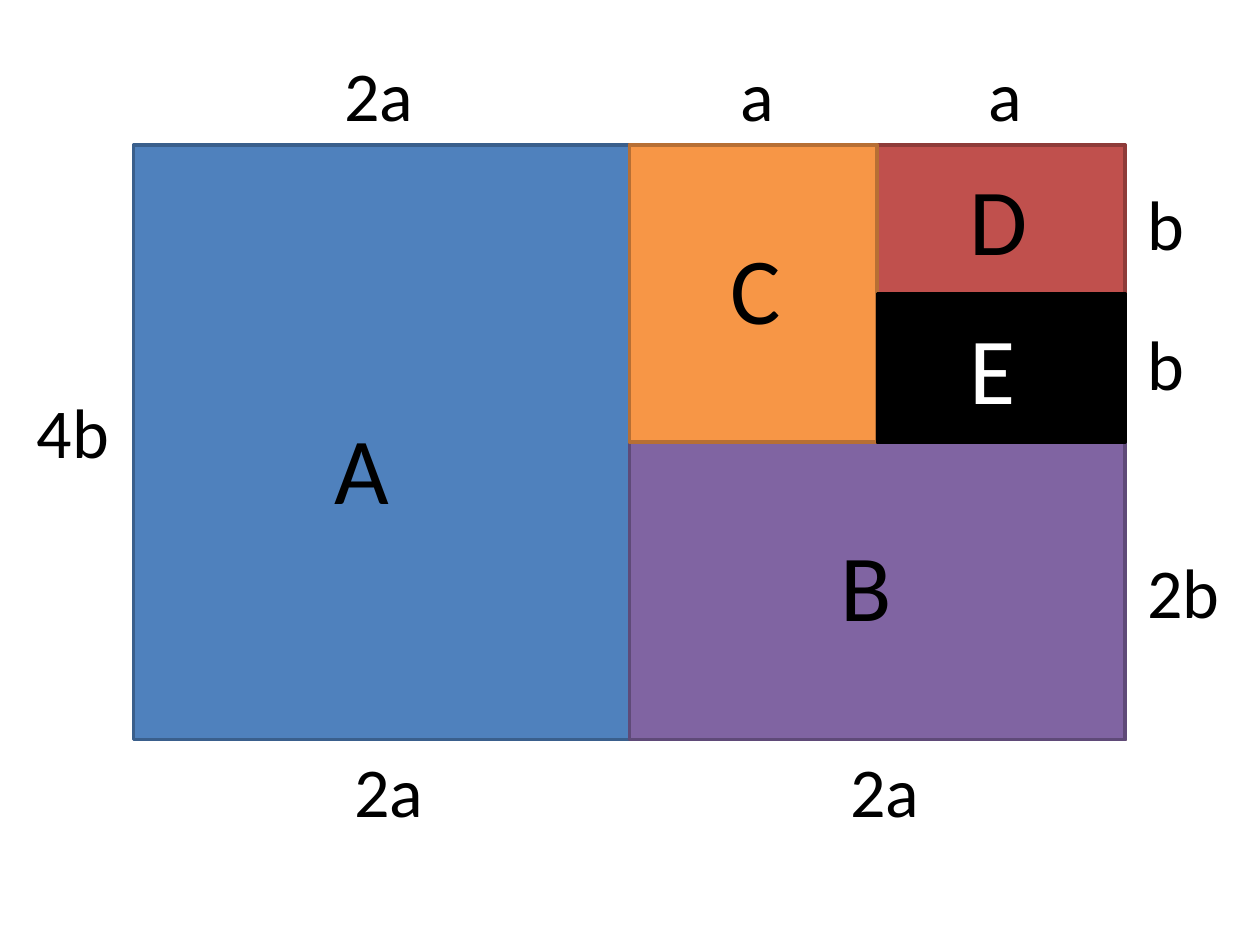
"""Draw a rectangle split into halves, with its sides labelled in a and b."""
from dataclasses import dataclass

from pptx import Presentation
from pptx.dml.color import RGBColor as Color
from pptx.enum.shapes import MSO_SHAPE as Kind
from pptx.enum.text import MSO_AUTO_SIZE as Fit
from pptx.slide import Slide
from pptx.util import Inches, Pt


@dataclass(frozen=True)
class Theme:
    font: str = "Calibri"
    name: int = 54
    side: int = 40
    edge: int = 2
    black: str = "000000"
    white: str = "FFFFFF"
    blue: str = "4F81BD"
    navy: str = "3A5F8C"
    red: str = "C0504D"
    wine: str = "8E3B39"
    violet: str = "8064A2"
    plum: str = "5F4A78"
    orange: str = "F79646"
    brown: str = "B76F34"


@dataclass(frozen=True)
class Grid:
    left: float = 1.06
    top: float = 1.15
    wide: float = 7.87 / 4
    high: float = 4.72 / 4

    def box(self, col: float, row: float, cols: float, rows: float) -> tuple:
        return (Inches(self.left + col * self.wide), Inches(self.top + row * self.high),
                Inches(cols * self.wide), Inches(rows * self.high))


@dataclass(frozen=True)
class Part:
    col: float
    row: float
    cols: float
    rows: float
    fill: str
    line: str


@dataclass(frozen=True)
class Label:
    text: str
    col: float
    row: float
    size: int
    cols: float = 0.32
    color: str = Theme.black


THEME = Theme()
GRID = Grid()
ROWS = {THEME.name: 0.86, THEME.side: 0.65}
ABOVE, BELOW, RIGHT = -0.67, 4.01, 4.04

PARTS = [
    Part(0, 0, 4, 4, THEME.blue, THEME.navy),
    Part(2, 0, 2, 4, THEME.red, THEME.wine),
    Part(2, 2, 2, 2, THEME.violet, THEME.plum),
    Part(2, 0, 1, 2, THEME.orange, THEME.brown),
    Part(3, 1, 1, 1, THEME.black, THEME.black),
]
LABELS = [
    Label("A", 0.76, 1.74, THEME.name),
    Label("B", 2.8, 2.53, THEME.name),
    Label("C", 2.36, 0.53, THEME.name),
    Label("D", 3.32, 0.07, THEME.name),
    Label("E", 3.32, 1.07, THEME.name, color=THEME.white),
    Label("b", RIGHT, 0.2, THEME.side),
    Label("b", RIGHT, 1.14, THEME.side),
    Label("2b", RIGHT, 2.67, THEME.side, 0.4),
    Label("a", 3.4, ABOVE, THEME.side),
    Label("a", 2.4, ABOVE, THEME.side),
    Label("2a", 0.8, ABOVE, THEME.side, 0.44),
    Label("2a", 2.84, BELOW, THEME.side, 0.44),
    Label("2a", 0.84, BELOW, THEME.side, 0.4),
    Label("4b", -0.44, 1.6, THEME.side, 0.44),
]


def draw_part(slide: Slide, part: Part) -> None:
    rect = slide.shapes.add_shape(
        Kind.RECTANGLE, *GRID.box(part.col, part.row, part.cols, part.rows))
    rect.shadow.inherit = False
    rect.fill.solid()
    rect.fill.fore_color.rgb = Color.from_string(part.fill)
    rect.line.color.rgb = Color.from_string(part.line)
    rect.line.width = Pt(THEME.edge)


def draw_label(slide: Slide, label: Label) -> None:
    box = slide.shapes.add_textbox(
        *GRID.box(label.col, label.row, label.cols, ROWS[label.size]))
    frame = box.text_frame
    frame.word_wrap = True
    frame.auto_size = Fit.SHAPE_TO_FIT_TEXT
    frame.text = label.text
    font = frame.paragraphs[0].runs[0].font
    font.name = THEME.font
    font.size = Pt(label.size)
    font.color.rgb = Color.from_string(label.color)


def main() -> None:
    deck = Presentation()
    deck.slide_width, deck.slide_height = Inches(10), Inches(7.5)
    slide = deck.slides.add_slide(deck.slide_layouts[6])
    for part in PARTS:
        draw_part(slide, part)
    for label in LABELS:
        draw_label(slide, label)
    deck.save("out.pptx")


if __name__ == "__main__":
    main()
